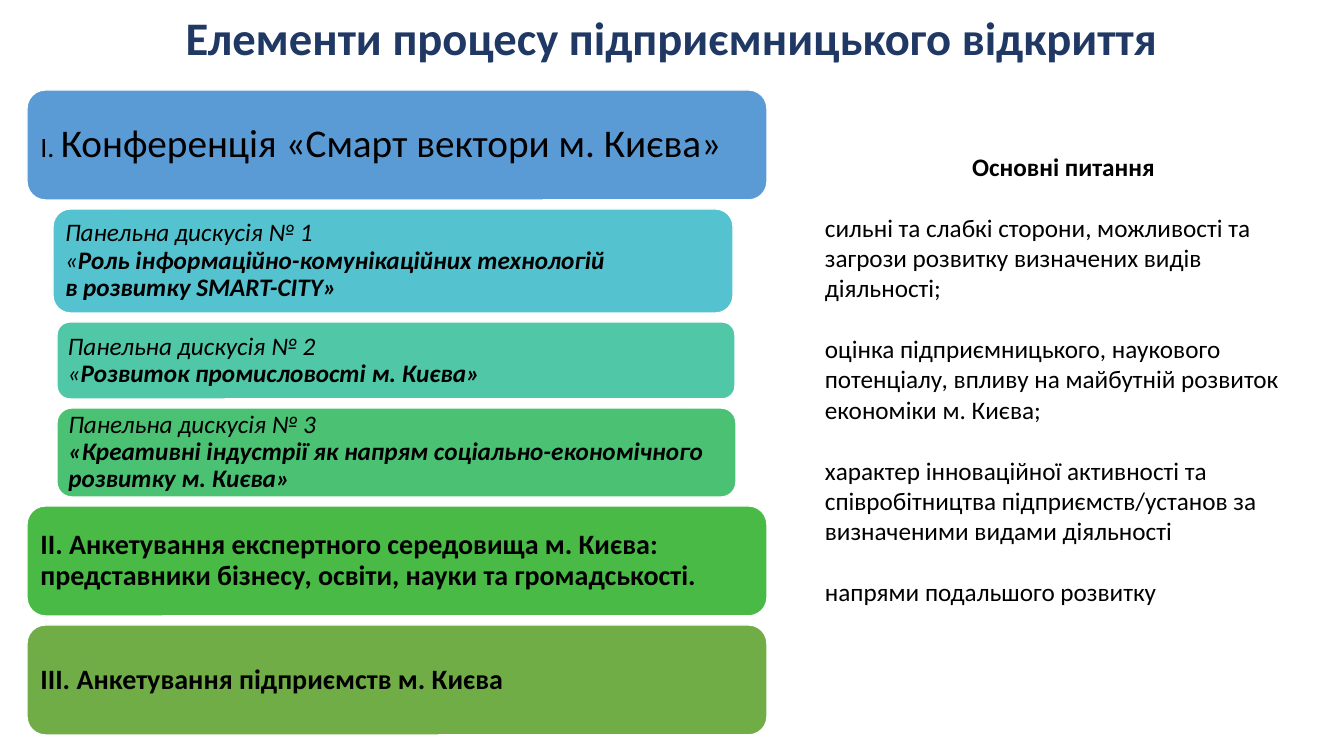
import pptx
import pptx.dml.color
import pptx.enum.shapes
import pptx.enum.text
import pptx.util

PX = 914400 / 100.8  # EMU in one px
COLORS = {
    "title": "203864", "text": "000000", "edge": "FFFFFF",
    "blue": "5B9BD5", "cyan": "55C3CF", "teal": "50C8A7",
    "mint": "4BC174", "green": "4ABA46", "olive": "70AD47",
}
TITLE = "Елементи процесу підприємницького відкриття"

# Each paragraph is a list of spans: (text, size in pt, bold, italic)
CONFERENCE = [[("І. ", 20, False, False),
               ("Конференція «Смарт вектори м. Києва»", 28, False, False)]]
PANEL_1 = [
    [("Панельна дискусія № 1", 18, False, True)],
    [("«", 18, False, True),
     ("Роль інформаційно-комунікаційних технологій", 18, True, True)],
    [("в розвитку SMART-CITY»", 18, True, True)],
]
PANEL_2 = [
    [("Панельна дискусія № 2", 18, False, True)],
    [("«", 18, False, True), ("Розвиток промисловості м. Києва»", 18, True, True)],
]
PANEL_3 = [
    [("Панельна дискусія № 3", 18, False, True)],
    [("«Креативні індустрії як напрям соціально-економічного "
      "розвитку м. Києва»", 18, True, True)],
]
EXPERT_SURVEY = [[("ІІ. Анкетування експертного середовища м. Києва: "
                   "представники бізнесу, освіти, науки та громадськості.", 20, True, False)]]
COMPANY_SURVEY = [[("ІІІ. Анкетування підприємств м. Києва", 20, True, False)]]

# left, width, height, text inset, color, paragraphs
STAGES = [
    (27, 740, 110, 8, "blue", CONFERENCE),
    (53, 680, 104, 7, "cyan", PANEL_1),
    (57, 678, 77, 7, "teal", PANEL_2),
    (57, 679, 89, 7, "mint", PANEL_3),
    (27, 740, 110, 8, "green", EXPERT_SURVEY),
    (27, 740, 110, 8, "olive", COMPANY_SURVEY),
]
STAGES_TOP = 90
STAGE_GAP = 9

QUESTIONS_HEADING = "Основні питання"
QUESTIONS = [
    "сильні та слабкі сторони, можливості та загрози розвитку визначених видів діяльності;",
    "оцінка підприємницького, наукового потенціалу, впливу на майбутній розвиток економіки м. Києва;",
    "характер інноваційної активності та співробітництва підприємств/установ за визначеними видами діяльності",
    "напрями подальшого розвитку",
]


def px(length):
    return round(length * PX)


def rgb(name):
    return pptx.dml.color.RGBColor.from_string(COLORS[name])


def style(font, size, bold=False, italic=False, color="text"):
    font.name = "Calibri"
    font.size = pptx.util.Pt(size)
    font.bold = bold
    font.italic = italic
    font.color.rgb = rgb(color)


def add_text_box(page, left, top, width, height):
    box = page.shapes.add_textbox(px(left), px(top), px(width), px(height))
    box.text_frame.word_wrap = True
    return box.text_frame


def add_paragraph(frame, index):
    """Use the paragraph a frame starts with, then append further ones."""
    return frame.add_paragraph() if index else frame.paragraphs[0]


def add_title(page):
    frame = add_text_box(page, 117, 15, 1110, 56)
    frame.vertical_anchor = pptx.enum.text.MSO_ANCHOR.BOTTOM
    para = frame.paragraphs[0]
    para.text = TITLE
    para.alignment = pptx.enum.text.PP_ALIGN.CENTER
    para.line_spacing = 0.9
    style(para.font, 33.3, bold=True, color="title")


def add_stage(page, top, left, width, height, inset, color, paragraphs):
    box = page.shapes.add_shape(pptx.enum.shapes.MSO_SHAPE.ROUNDED_RECTANGLE,
                                px(left), px(top), px(width), px(height))
    box.shadow.inherit = False
    box.fill.solid()
    box.fill.fore_color.rgb = rgb(color)
    box.line.color.rgb = rgb("edge")
    box.line.width = pptx.util.Pt(1)
    frame = box.text_frame
    frame.word_wrap = True
    frame.vertical_anchor = pptx.enum.text.MSO_ANCHOR.MIDDLE
    frame.margin_left = frame.margin_right = px(inset)
    frame.margin_top = frame.margin_bottom = px(inset)
    for index, spans in enumerate(paragraphs):
        para = add_paragraph(frame, index)
        para.alignment = pptx.enum.text.PP_ALIGN.LEFT
        para.line_spacing = 0.9
        for text, size, bold, italic in spans:
            span = para.add_run()
            span.text = text
            style(span.font, size, bold, italic)


def add_questions(page):
    frame = add_text_box(page, 815, 146, 497, 499)
    for index, text in enumerate([QUESTIONS_HEADING] + QUESTIONS):
        para = add_paragraph(frame, index)
        para.text = text
        style(para.font, 18, bold=index == 0)
        if index:
            para.space_before = pptx.util.Pt(22)
        else:
            para.alignment = pptx.enum.text.PP_ALIGN.CENTER


def main():
    deck = pptx.Presentation()
    deck.slide_width, deck.slide_height = px(1344), px(756)
    page = deck.slides.add_slide(deck.slide_layouts[6])
    add_title(page)
    top = STAGES_TOP
    for left, width, height, inset, color, paragraphs in STAGES:
        add_stage(page, top, left, width, height, inset, color, paragraphs)
        top += height + STAGE_GAP
    add_questions(page)
    deck.save("out.pptx")


if __name__ == "__main__":
    main()
